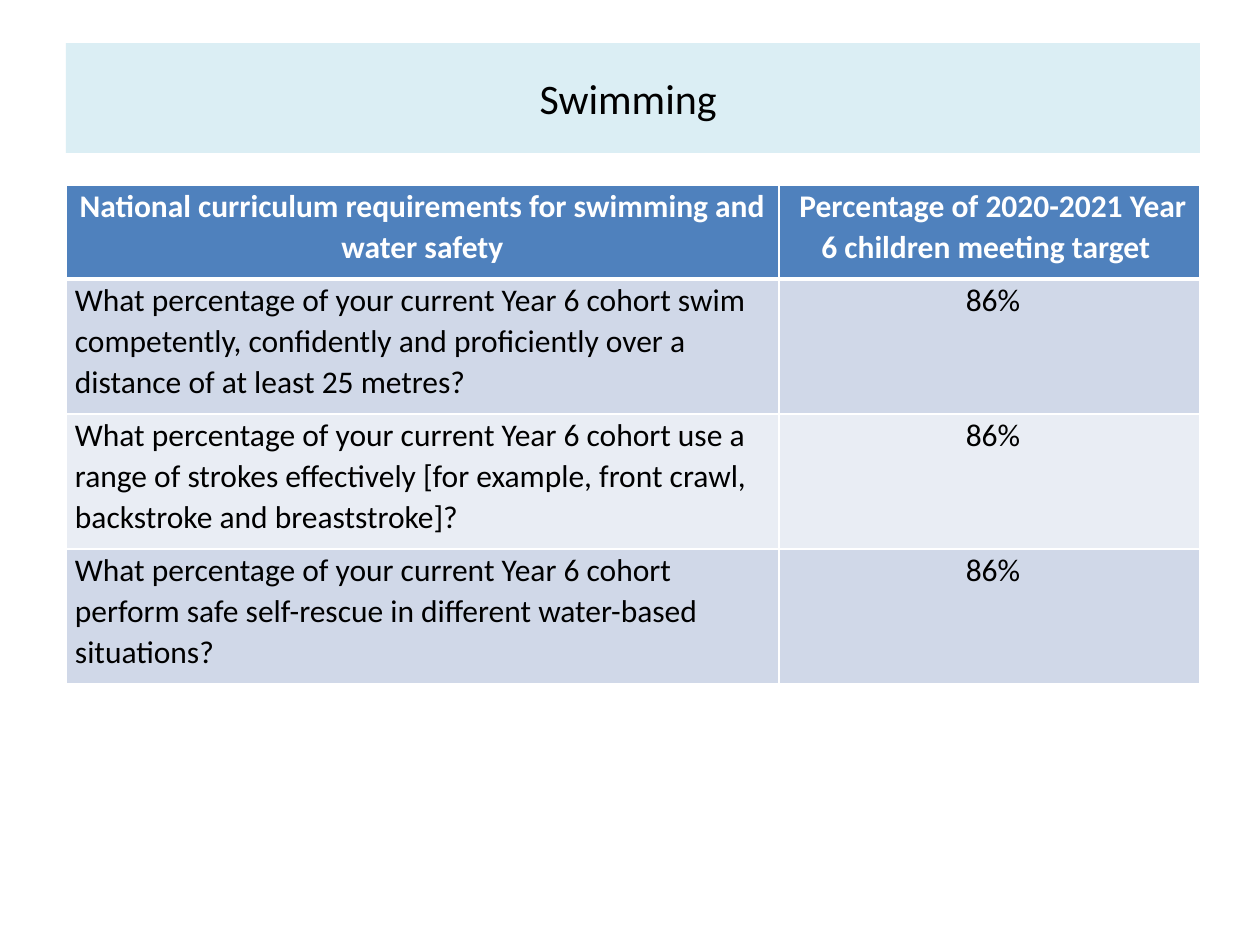
from typing import NamedTuple

from lxml.etree import SubElement
from pptx import Presentation
from pptx.dml.color import RGBColor
from pptx.enum.shapes import MSO_SHAPE as Shape
from pptx.enum.text import MSO_ANCHOR as Anchor, PP_ALIGN as Align
from pptx.oxml.ns import qn
from pptx.util import Emu, Pt

PX_PER_INCH = 126
FONT = "Calibri"
BLACK = RGBColor(0x00, 0x00, 0x00)
WHITE = RGBColor(0xFF, 0xFF, 0xFF)
BANNER_BLUE = RGBColor(0xDB, 0xEE, 0xF4)
HEADER_BLUE = RGBColor(0x4F, 0x81, 0xBD)
BANDS = (RGBColor(0xD0, 0xD8, 0xE8), RGBColor(0xE9, 0xED, 0xF4))

LEFT, WIDTH = 66, 1134
COLUMN_WIDTHS = (713, 421)
HEADER_HEIGHT, ROW_HEIGHT = 94, 135
CELL_INSET = 9


class Requirement(NamedTuple):
    question: str
    result: str


HEADINGS = Requirement(
    "National curriculum requirements for swimming and water safety",
    " Percentage of 2020-2021 Year 6 children meeting target ",
)
COHORT = "What percentage of your current Year 6 cohort "
REQUIREMENTS = (
    Requirement(COHORT + "swim competently, confidently and proficiently over a "
                "distance of at least 25 metres?", " 86%"),
    Requirement(COHORT + "use a range of strokes effectively [for example, front crawl, "
                "backstroke and breaststroke]?", " 86%"),
    Requirement(COHORT + "perform safe self-rescue in different water-based situations?",
                " 86%"),
)


def px(length: int) -> Emu:
    return Emu(round(length * 914400 / PX_PER_INCH))


def write_text(frame, text: str, *, size: int = 18, color: RGBColor = BLACK,
               bold: bool = False, align=Align.CENTER, line_spacing: float = 1.0,
               space_after: int = 0) -> None:
    frame.word_wrap = True
    paragraph = frame.paragraphs[0]
    paragraph.alignment = align
    paragraph.line_spacing = line_spacing
    paragraph.space_after = Pt(space_after)
    run = paragraph.add_run()
    run.text = text
    run.font.name = FONT
    run.font.size = Pt(size)
    run.font.bold = bold
    run.font.color.rgb = color


def draw_borders(cell, *, top: int = 1, bottom: int = 1) -> None:
    properties = cell._tc.get_or_add_tcPr()
    for side, points in (("L", 1), ("R", 1), ("T", top), ("B", bottom)):
        line = SubElement(properties, qn(f"a:ln{side}"), w=str(Pt(points)))
        fill = SubElement(line, qn("a:solidFill"))
        SubElement(fill, qn("a:srgbClr"), val=str(WHITE))


def draw_banner(slide, title: str) -> None:
    banner = slide.shapes.add_shape(Shape.RECTANGLE, px(LEFT), px(43), px(WIDTH), px(110))
    banner.shadow.inherit = False
    banner.fill.solid()
    banner.fill.fore_color.rgb = BANNER_BLUE
    banner.line.fill.background()
    banner.text_frame.vertical_anchor = Anchor.MIDDLE
    write_text(banner.text_frame, title, size=24)


def fill_row(table, index: int, entry: Requirement) -> None:
    is_header = index == 0
    background = HEADER_BLUE if is_header else BANDS[(index - 1) % len(BANDS)]
    table.rows[index].height = px(HEADER_HEIGHT if is_header else ROW_HEIGHT)
    for column, text in enumerate(entry):
        cell = table.cell(index, column)
        cell.margin_left = cell.margin_right = px(CELL_INSET)
        cell.margin_top = cell.margin_bottom = 0
        draw_borders(cell, top=3 if index == 1 else 1, bottom=3 if is_header else 1)
        cell.fill.solid()
        cell.fill.fore_color.rgb = background
        write_text(cell.text_frame, text, bold=is_header,
                   color=WHITE if is_header else BLACK,
                   align=Align.CENTER if is_header or column else Align.LEFT,
                   line_spacing=1.07, space_after=8)


def draw_results(slide) -> None:
    entries = (HEADINGS, *REQUIREMENTS)
    height = HEADER_HEIGHT + ROW_HEIGHT * len(REQUIREMENTS)
    table = slide.shapes.add_table(len(entries), len(COLUMN_WIDTHS), px(LEFT), px(185),
                                   px(WIDTH), px(height)).table
    for column, width in zip(table.columns, COLUMN_WIDTHS):
        column.width = px(width)
    for index, entry in enumerate(entries):
        fill_row(table, index, entry)


def main() -> None:
    presentation = Presentation()
    presentation.slide_width, presentation.slide_height = px(1260), px(945)
    slide = presentation.slides.add_slide(presentation.slide_layouts[6])

    # Title banner
    draw_banner(slide, "Swimming ")

    # Swimming results table
    draw_results(slide)

    presentation.save("out.pptx")


if __name__ == "__main__":
    main()
